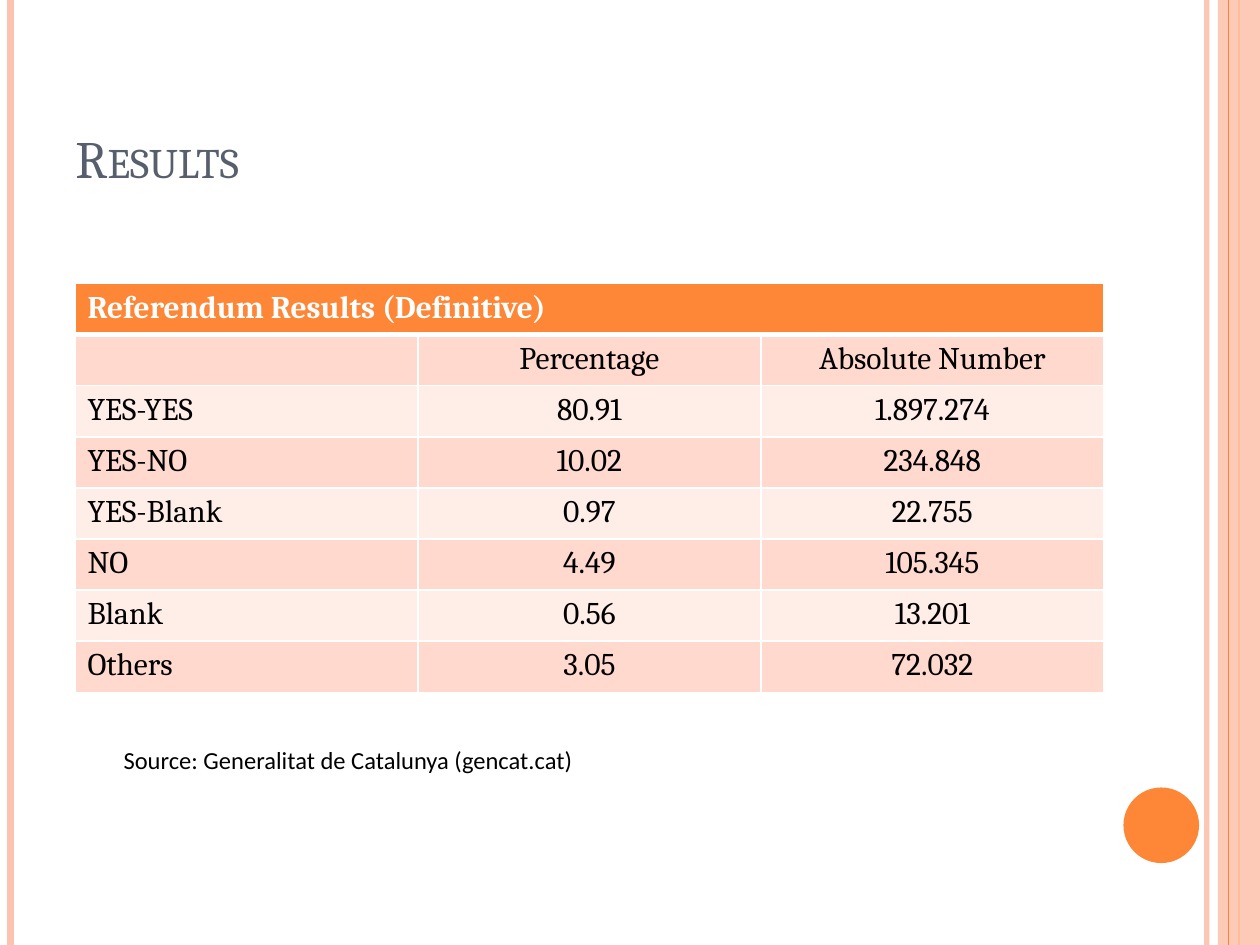
from dataclasses import dataclass

from lxml import etree
from pptx import Presentation
from pptx.dml.color import RGBColor
from pptx.enum import shapes, text
from pptx.oxml import ns
from pptx.util import Pt


@dataclass(frozen=True)
class Theme:
    accent: str = "FE8637"
    soft: str = "FEC3AE"
    bands: tuple = ("FFD9CE", "FFEDE8")
    white: str = "FFFFFF"
    black: str = "000000"
    slate: str = "575F6D"
    serif: str = "Cambria"
    sans: str = "Calibri"
    title: int = 30
    body: int = 18
    note: int = 14


THEME = Theme()
ROWS = [
    ("", "Percentage", "Absolute Number"),
    ("YES-YES", "80.91", "1.897.274"),
    ("YES-NO", "10.02", "234.848"),
    ("YES-Blank", "0.97", "22.755"),
    ("NO", "4.49", "105.345"),
    ("Blank", "0.56", "13.201"),
    ("Others", "3.05", "72.032"),
]


def paint(fill, color, alpha=None):
    fill.solid()
    fill.fore_color.rgb = RGBColor.from_string(color)
    return alpha


def fade(element, percent):
    for color in element.iter(ns.qn("a:srgbClr")):
        etree.SubElement(color, ns.qn("a:alpha"), val=str(percent * 1000))


def write(frame, words, face, size, color, bold=False, align=text.PP_ALIGN.LEFT):
    para = frame.paragraphs[0]
    para.text = words
    para.alignment = align
    para.font.name = face
    para.font.size = Pt(size)
    para.font.bold = bold
    para.font.color.rgb = RGBColor.from_string(color)
    return para


def add_rule(slide, x, top, height, color, width, alpha=100):
    rule = slide.shapes.add_connector(
        shapes.MSO_CONNECTOR.STRAIGHT, Pt(x), Pt(top), Pt(x), Pt(top + height))
    rule.line.width = Pt(width)
    paint(rule.line.fill, color)
    props = rule._element.spPr
    if alpha < 100:
        fade(props, alpha)
    etree.SubElement(props, ns.qn("a:effectLst"))


def add_block(slide, kind, box, color, alpha=100):
    block = slide.shapes.add_shape(kind, *map(Pt, box))
    block.shadow.inherit = False
    paint(block.fill, color)
    block.line.fill.background()
    if alpha < 100:
        fade(block._element.spPr, alpha)


def add_frame(slide, box):
    left, top, width, height = box
    right = left + width
    add_rule(slide, right - 30.4, top, height, THEME.soft, 3, 93)
    add_rule(slide, left + 6, top, height, THEME.soft, 4.5)
    add_rule(slide, right - 12, top, height, THEME.accent, 1.5)
    add_block(slide, shapes.MSO_SHAPE.RECTANGLE,
              (right - 24, top, 24, height), THEME.soft, 87)
    add_rule(slide, right - 18, top, height, THEME.accent, 0.75)
    add_block(slide, shapes.MSO_SHAPE.OVAL,
              (right - 78, top + 450, 43.2, 43.2), THEME.accent)


def add_title(slide, box, words):
    frame = slide.shapes.add_textbox(*map(Pt, box)).text_frame
    frame.word_wrap = True
    frame.vertical_anchor = text.MSO_ANCHOR.BOTTOM
    para = write(frame, words, THEME.serif, THEME.title, THEME.slate)
    para.runs[0].font._element.set("cap", "small")


def add_grid(slide, box, rows, cols):
    grid = slide.shapes.add_table(rows, cols, *map(Pt, box)).table
    for row in grid.rows:
        row.height = Pt(box[3] / rows)
    return grid


def add_edges(cell, **widths):
    props = cell._tc.get_or_add_tcPr()
    for side in "LRTB":
        edge = etree.SubElement(
            props, ns.qn(f"a:ln{side}"), w=str(Pt(widths.get(side, 1))))
        fill = etree.SubElement(edge, ns.qn("a:solidFill"))
        etree.SubElement(fill, ns.qn("a:srgbClr"), val=THEME.white)


def add_results(slide, box, head, rows):
    cols = len(rows[0])
    grid = add_grid(slide, box, len(rows) + 1, cols)
    for cell in grid.rows[0].cells:
        add_edges(cell, B=3)
        paint(cell.fill, THEME.accent)
    grid.cell(0, 0).merge(grid.cell(0, cols - 1))
    write(grid.cell(0, 0).text_frame, head, THEME.serif, THEME.body,
          THEME.white, bold=True)
    for r, row in enumerate(rows):
        for c, words in enumerate(row):
            cell = grid.cell(r + 1, c)
            add_edges(cell, T=1 if r else 3)
            paint(cell.fill, THEME.bands[r % 2])
            align = text.PP_ALIGN.CENTER if c else text.PP_ALIGN.LEFT
            write(cell.text_frame, words, THEME.serif, THEME.body,
                  THEME.black, align=align)


def add_source(slide, box, words):
    grid = add_grid(slide, box, 1, 1)
    grid.first_row = grid.horz_banding = False
    cell = grid.cell(0, 0)
    cell.fill.background()
    cell.margin_left = cell.margin_right = 0
    cell.margin_top = cell.margin_bottom = 0
    cell.vertical_anchor = text.MSO_ANCHOR.BOTTOM
    write(cell.text_frame, words, THEME.sans, THEME.note, THEME.black)


def main():
    deck = Presentation()
    deck.slide_width, deck.slide_height = Pt(720), Pt(540)
    slide = deck.slides.add_slide(deck.slide_layouts[6])
    add_frame(slide, (0, 0, 720, 540))
    add_title(slide, (36, 21.6, 588, 90), "Results")
    add_results(slide, (42.8, 162, 588, 233.6),
                "Referendum Results (Definitive)", ROWS)
    add_source(slide, (70.6, 412, 374.4, 31.5),
               "Source: Generalitat de Catalunya (gencat.cat)")
    deck.save("out.pptx")


if __name__ == "__main__":
    main()
